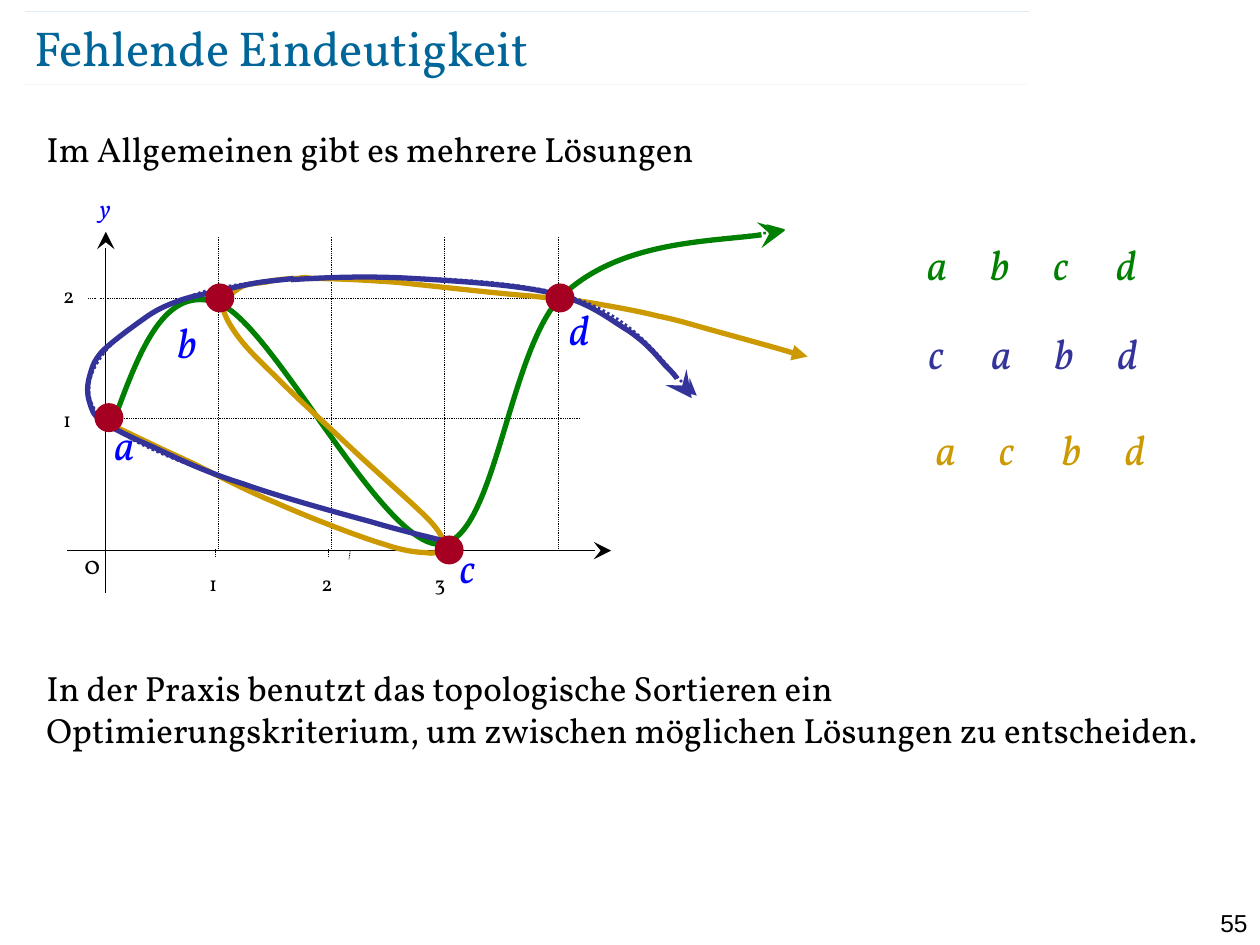
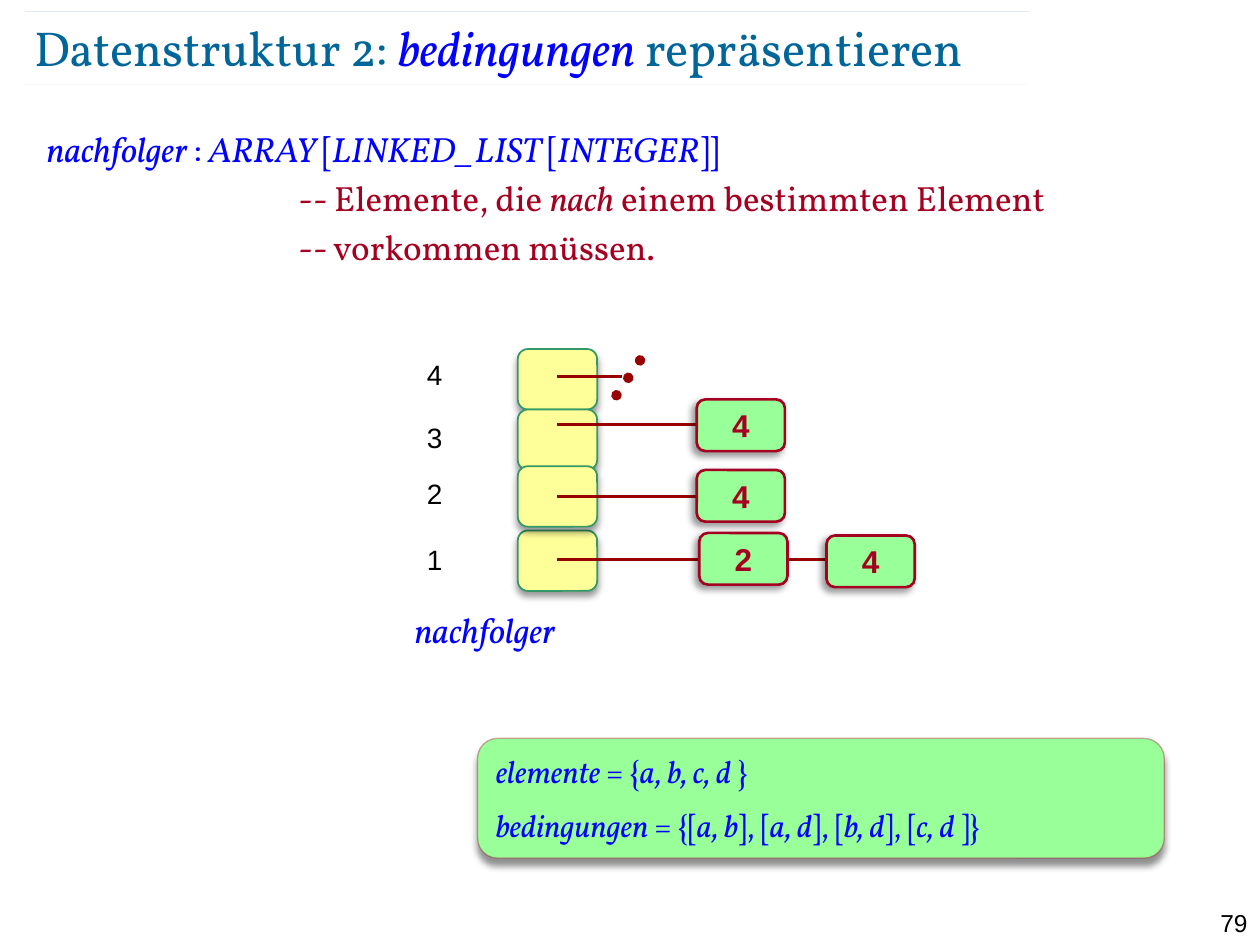
"""Build two lecture slides on topological sorting: missing uniqueness and the constraint data structure."""
from dataclasses import dataclass
from typing import Optional

from lxml.etree import SubElement
from pptx import Presentation
from pptx.dml.color import RGBColor
from pptx.enum.dml import MSO_LINE
from pptx.enum.shapes import MSO_CONNECTOR, MSO_SHAPE
from pptx.enum.text import MSO_ANCHOR, PP_ALIGN
from pptx.oxml.ns import qn
from pptx.util import Inches, Pt

COLORS = {
    "title": "006699", "black": "000000", "blue": "0000FF", "green": "008000",
    "gold": "CC9900", "indigo": "333399", "red": "A50021", "link": "990000",
    "cell": "FFFF99", "cell_edge": "339966", "node": "99FF99",
}
SERIF, SANS = "Vollkorn", "Arial"
BODY = (0.27, 0.96, 9.4, 6.17)


@dataclass
class Stroke:
    """Look of a line."""
    color: str
    width: float
    dotted: bool = False
    arrow: str = ""
    arrow_size: str = "lg"
    opacity: int = 100
    cap: str = ""


@dataclass
class Shadow:
    """Soft outer shadow, in points, degrees and percent."""
    blur: float
    distance: float
    angle: int
    opacity: int = 40


@dataclass
class Label:
    """Short text in the diagram."""
    text: str
    left: float
    top: float
    size: int = 12
    color: str = "black"
    italic: bool = False
    width: float = 0.08


@dataclass
class Curve:
    """Chain of cubic Bézier segments: a start, then three points for each segment."""
    points: list
    stroke: Stroke
    shift: float = 0


@dataclass
class Node:
    """List element."""
    value: str
    left: float
    top: float


@dataclass
class Row:
    """Array entry with its label, link and list elements."""
    index: str
    label_top: float
    cell_top: float
    link_y: float
    link_end: float
    nodes: list


def rgb(name: str) -> RGBColor:
    """Look up a colour."""
    return RGBColor.from_string(COLORS[name])


def write(frame, text: str, *, size: float, color: str = "black", font: str = SERIF,
          bold: bool = False, italic: bool = False, accent: Optional[str] = None,
          align=PP_ALIGN.LEFT, before: float = 0, indent: float = 0) -> None:
    """Add a paragraph; parts between asterisks are italic, in the accent colour if given."""
    para = frame.add_paragraph() if frame.text else frame.paragraphs[0]
    para.alignment = align
    para.space_before = Pt(before)
    if indent:
        properties = para._p.get_or_add_pPr()
        properties.set("marL", str(Inches(indent)))
        properties.set("indent", "0")
    for number, part in enumerate(text.split("*")):
        if not part:
            continue
        marked = number % 2 == 1
        span = para.add_run()
        span.text = part
        span.font.name, span.font.size = font, Pt(size)
        span.font.bold, span.font.italic = bold, italic or marked
        span.font.color.rgb = rgb(accent if marked and accent else color)


def add_frame(page, at: tuple, inset: bool = True, wrap: bool = True):
    """Add a text box and return its text frame."""
    frame = page.shapes.add_textbox(*map(Inches, at)).text_frame
    frame.word_wrap = wrap
    if not inset:
        clear_insets(frame)
    return frame


def clear_insets(frame) -> None:
    """Remove the inner margins of a text frame."""
    frame.margin_left = frame.margin_right = frame.margin_top = frame.margin_bottom = 0


def add_label(page, label: Label) -> None:
    """Draw a diagram label."""
    frame = add_frame(page, (label.left, label.top, label.width, label.size / 60), False, False)
    write(frame, label.text, size=label.size, color=label.color, italic=label.italic)


def apply_stroke(shape, stroke: Stroke) -> None:
    """Give a shape or connector its line."""
    shape.line.color.rgb = rgb(stroke.color)
    shape.line.width = Pt(stroke.width)
    if stroke.dotted:
        shape.line.dash_style = MSO_LINE.ROUND_DOT
    outline = shape.element.spPr.find(qn("a:ln"))
    if stroke.cap:
        outline.set("cap", stroke.cap)
    if stroke.opacity < 100:
        color = next(outline.iter(qn("a:srgbClr")))
        SubElement(color, qn("a:alpha"), val=str(stroke.opacity * 1000))
    if stroke.arrow:
        SubElement(outline, qn("a:tailEnd"), type=stroke.arrow,
                   w=stroke.arrow_size, len=stroke.arrow_size)


def add_line(page, start: tuple, end: tuple, stroke: Stroke) -> None:
    """Draw a straight line."""
    line = page.shapes.add_connector(MSO_CONNECTOR.STRAIGHT, *map(Inches, start + end))
    SubElement(line.element.spPr, qn("a:effectLst"))
    apply_stroke(line, stroke)


def add_curve(page, curve: Curve) -> None:
    """Draw a smooth open curve."""
    points = [(Inches(x), Inches(y + curve.shift)) for x, y in curve.points]
    builder = page.shapes.build_freeform(*points[0])
    builder.add_line_segments(points[1:], close=False)
    shape = builder.convert_to_shape()
    shape.shadow.inherit = False
    shape.fill.background()
    apply_stroke(shape, curve.stroke)
    steps = list(shape.element.spPr.iter(qn("a:lnTo")))
    outline = steps[0].getparent()
    for first in range(0, len(steps), 3):
        bezier = SubElement(outline, qn("a:cubicBezTo"))
        for step in steps[first:first + 3]:
            bezier.append(step[0])
            outline.remove(step)


def add_box(page, kind, at: tuple, fill: str, stroke: Optional[Stroke] = None,
            shadow: Optional[Shadow] = None):
    """Draw a filled preset shape and return its text frame."""
    box = page.shapes.add_shape(kind, *map(Inches, at))
    box.shadow.inherit = False
    box.fill.solid()
    box.fill.fore_color.rgb = rgb(fill)
    if stroke:
        apply_stroke(box, stroke)
    else:
        box.line.fill.background()
    if shadow:
        effects = box.element.spPr.find(qn("a:effectLst"))
        outer = SubElement(effects, qn("a:outerShdw"), blurRad=str(Pt(shadow.blur)),
                           dist=str(Pt(shadow.distance)), dir=str(shadow.angle * 60000),
                           algn="ctr", rotWithShape="0")
        color = SubElement(outer, qn("a:srgbClr"), val=COLORS["black"])
        SubElement(color, qn("a:alpha"), val=str(shadow.opacity * 1000))
    box.text_frame.vertical_anchor = MSO_ANCHOR.MIDDLE
    return box.text_frame


def add_page(deck, title: str, number: int):
    """Add a slide with title, title rules and page number."""
    page = deck.slides.add_slide(deck.slide_layouts[6])
    write(add_frame(page, (9.45, 7.16, 0.55, 0.24)), str(number), size=14, font=SANS,
          align=PP_ALIGN.RIGHT)
    for left, top in ((0.18, 0.67), (0.2, 0.09)):
        add_line(page, (left, top), (left + 7.97, top), Stroke("title", 0.1, opacity=35))
    frame = add_frame(page, (0.27, 0.13, 8.69, 0.48), inset=False)
    frame.vertical_anchor = MSO_ANCHOR.MIDDLE
    write(frame, title, size=28, color="title", accent="blue")
    return page


GREEN_PATH = [
    (0.91, 3.32), (1.11, 2.78), (1.31, 2.24), (1.74, 2.41), (2.17, 2.58), (3.03, 4.33),
    (3.49, 4.32), (3.94, 4.3), (4.03, 2.74), (4.48, 2.33), (4.94, 1.91), (5.94, 1.91), (6.23, 1.83)]
GOLD_A_TO_C = [
    (0.88, 3.37), (1.05, 3.45), (1.21, 3.53), (1.43, 3.63), (1.65, 3.73), (1.92, 3.88),
    (2.19, 3.99), (2.46, 4.11), (2.85, 4.26), (3.05, 4.32), (3.26, 4.39), (3.34, 4.38),
    (3.42, 4.39), (3.5, 4.39), (3.51, 4.34), (3.52, 4.34)]
GOLD_C_TO_B = [
    (3.52, 4.35), (3.52, 4.3), (3.53, 4.26), (3.4, 4.12), (3.27, 3.99), (2.95, 3.71),
    (2.76, 3.53), (2.57, 3.35), (2.38, 3.18), (2.24, 3.04), (2.1, 2.9), (2, 2.81),
    (1.92, 2.71), (1.84, 2.61), (1.78, 2.51), (1.77, 2.44), (1.77, 2.37), (1.85, 2.32),
    (1.91, 2.28), (1.96, 2.25), (2.03, 2.25), (2.11, 2.24), (2.18, 2.22), (2.3, 2.21),
    (2.36, 2.21), (2.42, 2.2), (2.44, 2.2), (2.47, 2.21)]
GOLD_B_TO_END = [
    (2.45, 2.21), (2.65, 2.21), (2.85, 2.22), (3.14, 2.24), (3.44, 2.27), (3.95, 2.33),
    (4.22, 2.35), (4.48, 2.38), (4.56, 2.38), (4.73, 2.41), (4.9, 2.44), (5.07, 2.47),
    (5.23, 2.51), (5.38, 2.54), (5.47, 2.57), (5.65, 2.62), (5.83, 2.67), (6.16, 2.76),
    (6.29, 2.8), (6.42, 2.83), (6.41, 2.83), (6.41, 2.83)]
INDIGO_DOTTED = [
    (3.53, 4.3), (2.32, 3.97), (1.11, 3.64), (0.8, 3.31), (0.48, 2.98), (1.03, 2.48),
    (1.63, 2.31), (2.22, 2.15), (3.72, 2.17), (4.36, 2.31), (5.01, 2.45), (5.33, 3), (5.53, 3.14)]
INDIGO_C_TO_B = [
    (3.51, 4.29), (3.36, 4.25), (3.21, 4.22), (2.94, 4.14), (2.68, 4.07), (2.21, 3.94),
    (1.93, 3.84), (1.64, 3.75), (1.43, 3.65), (1.24, 3.56), (1.06, 3.48), (0.91, 3.41),
    (0.82, 3.35), (0.73, 3.29), (0.73, 3.25), (0.71, 3.19), (0.69, 3.13), (0.69, 3.06),
    (0.71, 2.99), (0.73, 2.92), (0.74, 2.87), (0.81, 2.79), (0.89, 2.71), (1.07, 2.58),
    (1.17, 2.51), (1.27, 2.44), (1.36, 2.41), (1.44, 2.38), (1.53, 2.35), (1.6, 2.34),
    (1.69, 2.32), (1.78, 2.3), (1.9, 2.27), (2.01, 2.25), (2.11, 2.23), (2.26, 2.22), (2.33, 2.21)]
INDIGO_B_TO_END = [
    (2.31, 2.22), (2.62, 2.2), (2.93, 2.19), (3.27, 2.21), (3.62, 2.23), (4.11, 2.26),
    (4.39, 2.33), (4.68, 2.4), (4.83, 2.53), (4.98, 2.62), (5.13, 2.72), (5.2, 2.81),
    (5.28, 2.9), (5.37, 2.99), (5.45, 3.1), (5.49, 3.16)]
CURVES = [
    Curve(GREEN_PATH, Stroke("green", 3, arrow="stealth")),
    Curve(GREEN_PATH, Stroke("green", 1.5, True, "stealth"), shift=-0.01),
    Curve(GOLD_A_TO_C, Stroke("gold", 3)),
    Curve(GOLD_C_TO_B, Stroke("gold", 3)),
    Curve(GOLD_B_TO_END, Stroke("gold", 3, arrow="triangle", arrow_size="med")),
    Curve(INDIGO_DOTTED, Stroke("indigo", 1.5, True, "stealth")),
    Curve(INDIGO_C_TO_B, Stroke("indigo", 3)),
    Curve(INDIGO_B_TO_END, Stroke("indigo", 3, arrow="stealth")),
]
AXIS_LABELS = [
    Label("1", 0.5, 3.23, width=0.05), Label("2", 0.5, 2.24), Label("0", 0.67, 4.35, 15, width=0.11),
    Label("1", 1.66, 4.53, width=0.05), Label("2", 2.55, 4.53), Label("3", 3.45, 4.53),
    Label("y", 0.79, 1.53, 14, "blue", True, 0.09)]
POINT_LABELS = [("a", 0.91, 3.32), ("b", 1.41, 2.51), ("c", 3.65, 4.3), ("d", 4.52, 2.41)]
POINTS = [(1.63, 2.25), (0.75, 3.2), (3.45, 4.25), (4.33, 2.25)]
SOLUTIONS = [("abcd", "green", 7.36, 1.89), ("cabd", "indigo", 7.37, 2.6), ("acbd", "gold", 7.43, 3.36)]
ROWS = [
    Row("1", 4.26, 4.21, 4.44, 6.99, [Node("2", 5.55, 4.23), Node("4", 6.56, 4.25)]),
    Row("4", 2.79, 2.77, 2.99, 4.94, []),
    Row("3", 3.29, 3.25, 3.37, 6.23, [Node("4", 5.53, 3.17)]),
    Row("2", 3.73, 3.7, 3.94, 6.23, [Node("4", 5.53, 3.73)]),
]


def build_uniqueness(deck) -> None:
    """Draw the slide with several valid orders."""
    page = add_page(deck, "Fehlende Eindeutigkeit", 55)
    body = add_frame(page, BODY)
    write(body, "Im Allgemeinen gibt es mehrere Lösungen", size=20)
    write(body, "In der Praxis benutzt das topologische Sortieren ein Optimierungskriterium, "
          "um zwischen möglichen Lösungen zu entscheiden.", size=20, before=284)
    grid, axis = Stroke("black", 0.5, dotted=True), Stroke("black", 0.5, arrow="stealth")
    for column in range(4):
        left = 1.73 + 0.9 * column
        add_line(page, (left, 1.88), (left, 4.35), grid)
    for start, end in (((0.7, 2.37), (0.76, 2.37)), ((0.87, 3.32), (4.61, 3.32)),
                       ((0.79, 2.37), (4.53, 2.37)), ((2.77, 4.44), (2.78, 4.37)),
                       ((1.71, 4.42), (1.71, 4.35)), ((2.61, 4.42), (2.61, 4.35))):
        add_line(page, start, end, grid)
    add_line(page, (0.84, 4.71), (0.84, 1.84), axis)
    add_line(page, (0.53, 4.37), (4.85, 4.37), axis)
    for label in AXIS_LABELS:
        add_label(page, label)
    for name, left, top in POINT_LABELS:
        add_label(page, Label(name, left, top, 24, "blue", True, 0.17))
    for curve in CURVES:
        add_curve(page, curve)
    for left, top in POINTS:
        add_box(page, MSO_SHAPE.OVAL, (left, top, 0.23, 0.23), "red")
    for order, color, left, top in SOLUTIONS:
        for column, name in enumerate(order):
            add_label(page, Label(name, left + 0.5 * column, top, 24, color, True, 0.17))


def build_constraints(deck) -> None:
    """Draw the slide with the array of linked lists."""
    page = add_page(deck, "Datenstruktur 2: *bedingungen* repräsentieren", 79)
    rounded = MSO_SHAPE.ROUNDED_RECTANGLE
    for row in ROWS:
        add_box(page, rounded, (4.11, row.cell_top, 0.63, 0.48), "cell",
                Stroke("cell_edge", 1), Shadow(4, 3, 90))
    add_line(page, (5.08, 2.86), (4.85, 3.2), Stroke("link", 6, dotted=True, cap="rnd"))
    body = add_frame(page, BODY)
    write(body, "*nachfolger *:* ARRAY *[*LINKED_LIST *[*INTEGER*]]", size=20, color="blue")
    for comment in ("-- Elemente, die *nach* einem bestimmten Element", "-- vorkommen müssen."):
        write(body, comment, size=20, color="red", before=4, indent=2)
    for row in ROWS:
        write(add_frame(page, (3.29, row.label_top, 0.58, 0.37)), row.index, size=16, font=SANS)
        add_line(page, (4.42, row.link_y), (row.link_end, row.link_y), Stroke("link", 1.5))
        for node in row.nodes:
            frame = add_box(page, rounded, (node.left, node.top, 0.7, 0.41), "node",
                            Stroke("red", 1.5), Shadow(4, 3, 135))
            clear_insets(frame)
            write(frame, node.value, size=18, color="red", font=SANS, bold=True,
                  align=PP_ALIGN.CENTER)
    write(add_frame(page, (3.19, 4.78, 2.3, 0.43)), "nachfolger", size=20, color="blue", italic=True)
    example = add_box(page, rounded, (3.79, 5.86, 5.45, 0.95), "node",
                      Stroke("red", 0.75, opacity=34), Shadow(4, 4, 90, 43))
    write(example, "*elemente *= {*a, b, c, d* }", size=18, color="blue")
    write(example, "*bedingungen *= {[*a, b*], [*a, d*], [*b, d*], [*c, d* ]}", size=18,
          color="blue", before=9)


def main() -> None:
    """Build and save the deck."""
    deck = Presentation()
    deck.slide_width, deck.slide_height = Inches(10), Inches(7.5)
    build_uniqueness(deck)
    build_constraints(deck)
    deck.save("out.pptx")


if __name__ == "__main__":
    main()
